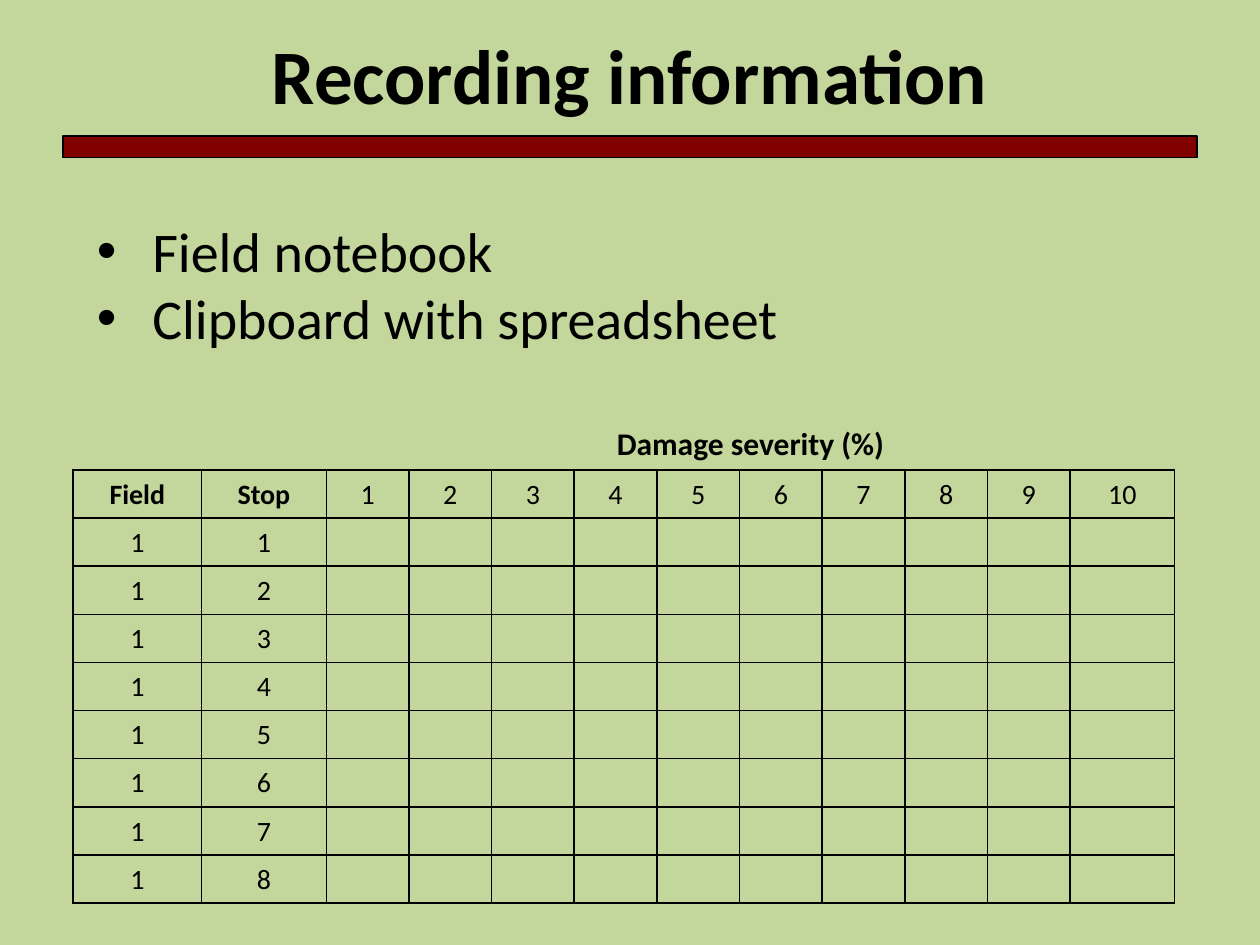
from lxml import etree
from pptx import Presentation
from pptx.dml.color import RGBColor
from pptx.enum import shapes, text
from pptx.oxml import ns
from pptx.util import Inches, Pt

TITLE = "Recording information"
TOOLS = ["Field notebook", "Clipboard with spreadsheet"]
SEVERITY = "Damage severity (%)"
HEADERS = ["Field", "Stop"] + [str(plant) for plant in range(1, 11)]
STOPS = [["1", str(stop)] for stop in range(1, 9)]
COLUMN_WIDTHS = [1.02, 0.99] + [0.656] * 9 + [0.83]
ROW_HEIGHTS = [0.81] + [0.382] * 9
BLACK, GREEN, MAROON = "000000", "C3D69B", "800000"


def color(value):
    return RGBColor.from_string(value)


def add_run(paragraph, words, size, bold=False):
    run = paragraph.add_run()
    run.text = words
    run.font.name = "Calibri"
    run.font.size = Pt(size)
    run.font.bold = bold
    run.font.color.rgb = color(BLACK)


def add_bullet(paragraph, indent):
    properties = paragraph._p.get_or_add_pPr()
    properties.set("marL", str(Inches(indent)))
    properties.set("indent", str(-Inches(indent)))
    etree.SubElement(properties, ns.qn("a:buFont"), typeface="Arial")
    etree.SubElement(properties, ns.qn("a:buChar"), char="•")


def set_borders(cell, visible_sides):
    properties = cell._tc.get_or_add_tcPr()
    for position, side in enumerate("LRTB"):
        line = etree.Element(ns.qn(f"a:ln{side}"), w=str(Pt(1)))
        if side in visible_sides:
            fill = etree.SubElement(line, ns.qn("a:solidFill"))
            etree.SubElement(fill, ns.qn("a:srgbClr"), val=BLACK)
        else:
            etree.SubElement(line, ns.qn("a:noFill"))
        properties.insert(position, line)


def fill_cell(cell, words, size, bold):
    paragraph = cell.text_frame.paragraphs[0]
    paragraph.alignment = text.PP_ALIGN.CENTER
    add_run(paragraph, words, size, bold)


def add_record_table(slide):
    frame = slide.shapes.add_table(
        len(ROW_HEIGHTS), len(COLUMN_WIDTHS), Inches(0.58), Inches(2.92),
        Inches(sum(COLUMN_WIDTHS)), Inches(sum(ROW_HEIGHTS)))
    table = frame.table
    table.first_row = table.horz_banding = False
    for column, width in zip(table.columns, COLUMN_WIDTHS):
        column.width = Inches(width)
    for row_index, (row, height) in enumerate(zip(table.rows, ROW_HEIGHTS)):
        row.height = Inches(height)
        for cell in row.cells:
            cell.fill.background()
            cell.margin_top = 0
            cell.vertical_anchor = text.MSO_ANCHOR.BOTTOM
            set_borders(cell, "LRTB" if row_index else "B")
    table.cell(0, 2).merge(table.cell(0, len(HEADERS) - 1))
    fill_cell(table.cell(0, 2), SEVERITY, 18, True)
    for row_index, values in enumerate([HEADERS] + STOPS, start=1):
        for column_index, value in enumerate(values):
            fill_cell(table.cell(row_index, column_index), value, 16, value.isalpha())


def main():
    presentation = Presentation()
    presentation.slide_width, presentation.slide_height = Inches(10), Inches(7.5)
    slide = presentation.slides.add_slide(presentation.slide_layouts[5])
    slide.background.fill.solid()
    slide.background.fill.fore_color.rgb = color(GREEN)

    bar = slide.shapes.add_shape(shapes.MSO_SHAPE.RECTANGLE, Inches(0.5), Inches(1.08),
                                 Inches(9), Inches(0.17))
    bar.shadow.inherit = False
    bar.fill.solid()
    bar.fill.fore_color.rgb = color(MAROON)
    bar.line.color.rgb = color(BLACK)
    bar.line.width = Pt(1)

    title = slide.shapes.title
    title.left, title.top = Inches(0), Inches(0.17)
    title.width, title.height = Inches(10), Inches(0.84)
    title.text_frame.vertical_anchor = text.MSO_ANCHOR.TOP
    title.text_frame.paragraphs[0].alignment = text.PP_ALIGN.CENTER
    add_run(title.text_frame.paragraphs[0], TITLE, 44, True)

    tools = slide.shapes.add_textbox(Inches(0.67), Inches(1.67), Inches(5.61), Inches(1.17))
    tools.text_frame.word_wrap = True
    for index, tool in enumerate(TOOLS):
        frame = tools.text_frame
        paragraph = frame.add_paragraph() if index else frame.paragraphs[0]
        add_bullet(paragraph, 0.44)
        add_run(paragraph, tool, 32)

    add_record_table(slide)
    presentation.save("out.pptx")


if __name__ == "__main__":
    main()
